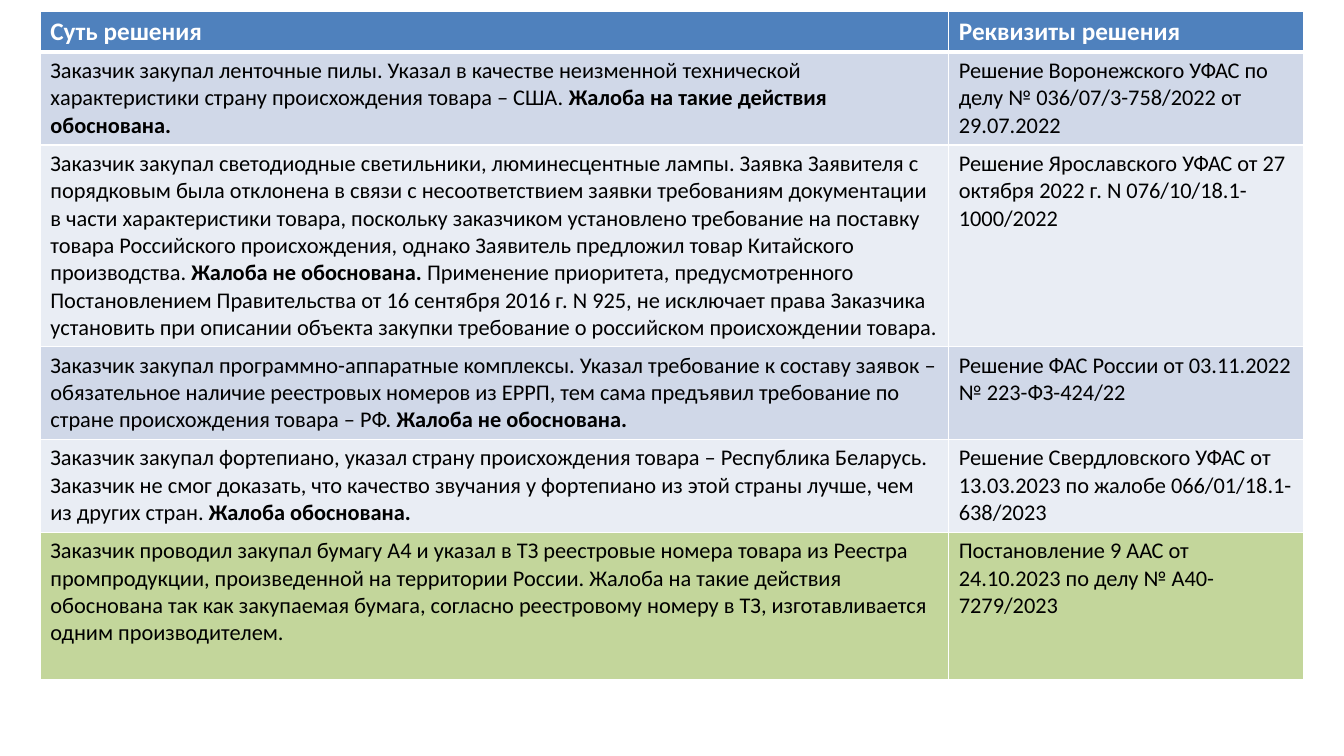
"""Builds a one-slide table of procurement rulings on country of origin."""
import pptx
import pptx.dml.color
import pptx.oxml
import pptx.oxml.ns
import pptx.util

RGBColor = pptx.dml.color.RGBColor
WHITE = RGBColor(0xFF, 0xFF, 0xFF)
BLACK = RGBColor(0, 0, 0)
BLUE = RGBColor(0x4F, 0x81, 0xBD)
BAND_DARK = RGBColor(0xD0, 0xD8, 0xE8)
BAND_LIGHT = RGBColor(0xE9, 0xED, 0xF4)
GREEN = RGBColor(0xC3, 0xD6, 0x9B)

HEADER = {"size": pptx.util.Pt(18), "bold": True, "name": "Calibri"}
BODY = {"size": pptx.util.Pt(16), "bold": False, "name": "Calibri"}
STRONG = {**BODY, "bold": True}

TABLE_AREA = (0.03, 0.015, 0.94, 0.883)
COLUMN_WEIGHTS = (9.01, 3.52)
ROW_WEIGHTS = (0.4, 0.92, 2, 0.92, 0.92, 1.46)

HEADINGS = ("Суть решения", "Реквизиты решения")
RULINGS = [
    (BAND_DARK,
     [("Заказчик закупал ленточные пилы. Указал в качестве неизменной технической "
       "характеристики страну происхождения товара – США. ", BODY),
      ("Жалоба на такие действия обоснована.", STRONG)],
     "Решение Воронежского УФАС по делу № 036/07/3-758/2022 от 29.07.2022"),
    (BAND_LIGHT,
     [("Заказчик закупал светодиодные светильники, люминесцентные лампы. Заявка "
       "Заявителя с порядковым была отклонена в связи с несоответствием заявки "
       "требованиям документации в части характеристики товара, поскольку заказчиком "
       "установлено требование на поставку товара Российского происхождения, однако "
       "Заявитель предложил товар Китайского производства. ", BODY),
      ("Жалоба не обоснована. ", STRONG),
      ("Применение приоритета, предусмотренного Постановлением Правительства от "
       "16 сентября 2016 г. N 925, не исключает права Заказчика установить при описании "
       "объекта закупки требование о российском происхождении товара.", BODY)],
     "Решение Ярославского УФАС от 27 октября 2022 г. N 076/10/18.1-1000/2022"),
    (BAND_DARK,
     [("Заказчик закупал программно-аппаратные комплексы. Указал требование к составу "
       "заявок – обязательное наличие реестровых номеров из ЕРРП, тем сама предъявил "
       "требование по стране происхождения товара – РФ. ", BODY),
      ("Жалоба не обоснована.", STRONG)],
     "Решение ФАС России от 03.11.2022 № 223-ФЗ-424/22"),
    (BAND_LIGHT,
     [("Заказчик закупал фортепиано, указал страну происхождения товара – Республика "
       "Беларусь. Заказчик не смог доказать, что качество звучания у фортепиано из этой "
       "страны лучше, чем из других стран. ", BODY),
      ("Жалоба обоснована.", STRONG)],
     "Решение Свердловского УФАС от 13.03.2023 по жалобе 066/01/18.1-638/2023"),
    (GREEN,
     [("Заказчик проводил закупал бумагу А4 и указал в ТЗ реестровые номера товара из "
       "Реестра промпродукции, произведенной на территории России. Жалоба на такие "
       "действия обоснована так как закупаемая бумага, согласно реестровому номеру в ТЗ, "
       "изготавливается одним производителем.", BODY)],
     "Постановление 9 ААС от 24.10.2023 по делу № А40-7279/2023"),
]


class SlideBuilder:
    def __init__(self, deck):
        self.width, self.height = deck.slide_width, deck.slide_height
        self.page = deck.slides.add_slide(deck.slide_layouts[6])

    def table(self, area, column_weights, row_weights):
        left, top, width, height = (
            round(share * side)
            for share, side in zip(area, (self.width, self.height) * 2))
        table = self.page.shapes.add_table(
            len(row_weights), len(column_weights), left, top, width, height).table
        for column, weight in zip(table.columns, column_weights):
            column.width = round(width * weight / sum(column_weights))
        for row, weight in zip(table.rows, row_weights):
            row.height = round(height * weight / sum(row_weights))
        return table

    def border(self, cell, edge, points):
        cell.fill.background()
        properties = cell._tc.get_or_add_tcPr()
        line = pptx.oxml.parse_xml(
            f'<a:ln{edge} {pptx.oxml.ns.nsdecls("a")} w="{pptx.util.Pt(points)}">'
            f'<a:solidFill><a:srgbClr val="{WHITE}"/></a:solidFill></a:ln{edge}>')
        properties.insert(len(properties) - 1, line)

    def cell(self, cell, spans, fill, color, top=1, bottom=1):
        for edge, points in {"L": 1, "R": 1, "T": top, "B": bottom}.items():
            self.border(cell, edge, points)
        cell.fill.solid()
        cell.fill.fore_color.rgb = fill
        para = cell.text_frame.paragraphs[0]
        for text, style in spans:
            span = para.add_run()
            span.text = text
            span.font.color.rgb = color
            for name, value in style.items():
                setattr(span.font, name, value)


def main():
    deck = pptx.Presentation()
    deck.slide_width = pptx.util.Inches(13.33)
    deck.slide_height = pptx.util.Inches(7.5)
    builder = SlideBuilder(deck)
    table = builder.table(TABLE_AREA, COLUMN_WEIGHTS, ROW_WEIGHTS)
    for column, heading in enumerate(HEADINGS):
        builder.cell(table.cell(0, column), [(heading, HEADER)], BLUE, WHITE, bottom=3)
    for row, (fill, summary, reference) in enumerate(RULINGS, start=1):
        top = 3 if row == 1 else 1
        for column, spans in enumerate((summary, [(reference, BODY)])):
            builder.cell(table.cell(row, column), spans, fill, BLACK, top=top)
    deck.save("out.pptx")


if __name__ == "__main__":
    main()
